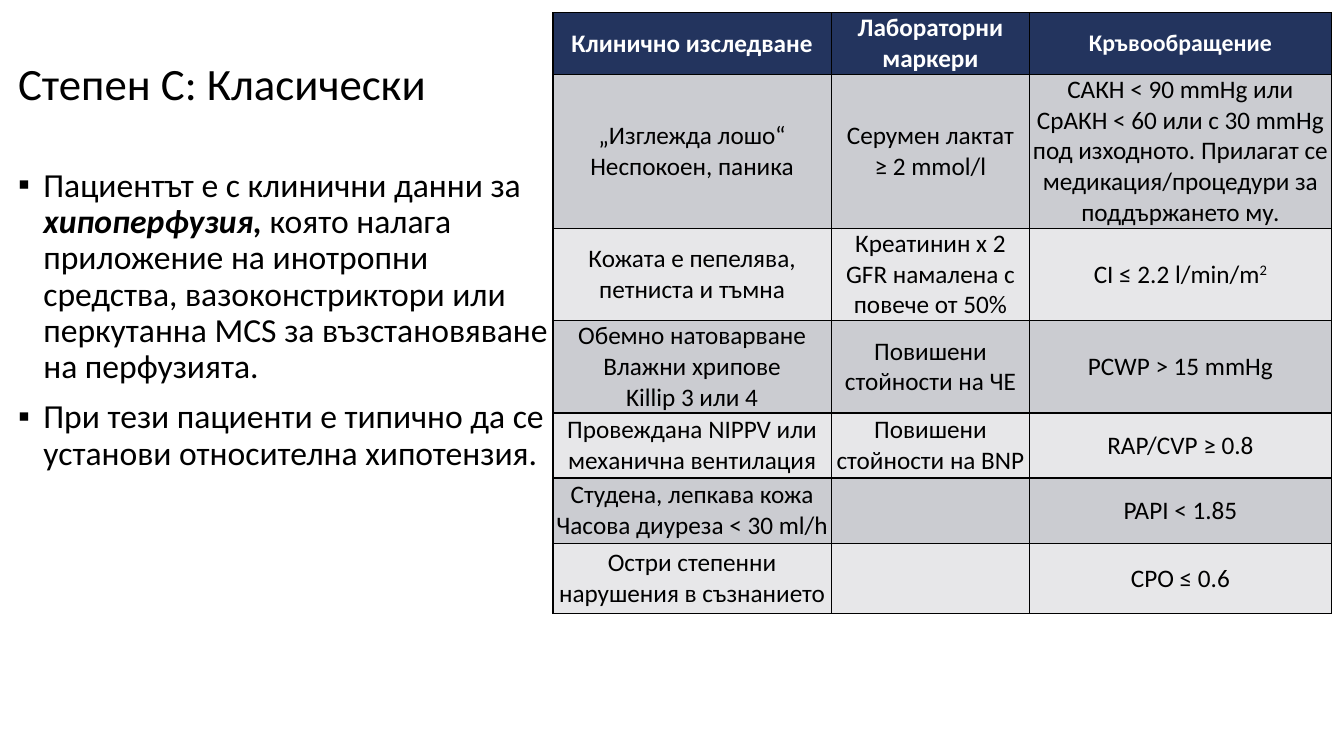
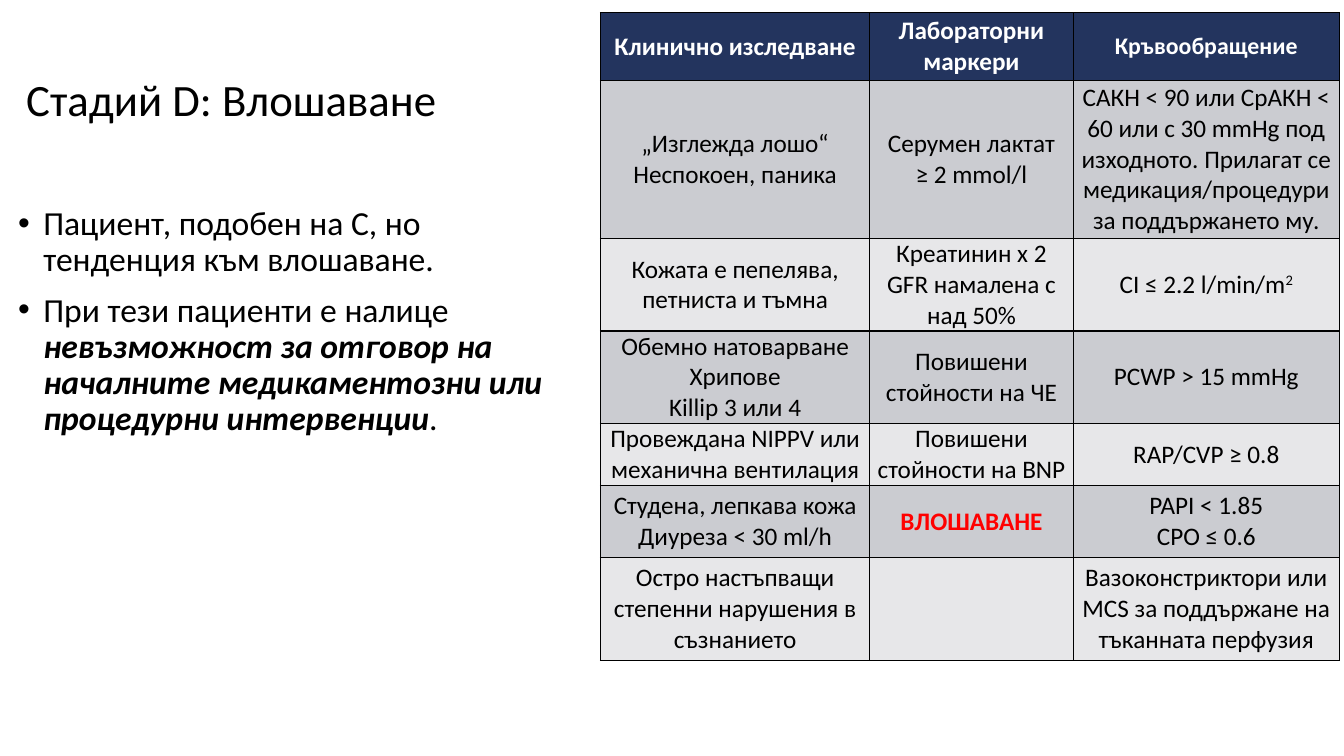
"""Build two slides on the clinical stages of shock, each with a criteria table."""
from dataclasses import dataclass

from lxml.etree import SubElement
from pptx import Presentation
from pptx.dml.color import RGBColor
from pptx.enum.text import MSO_ANCHOR as Anchor, PP_ALIGN as Align
from pptx.oxml.ns import qn
from pptx.slide import Slide
from pptx.table import _Cell as TableCell
from pptx.text.text import Font, TextFrame
from pptx.util import Pt

FONT = "Calibri"
BLACK, WHITE, RED = "000000", "FFFFFF", "FF0000"
NAVY, GREY, PALE = "23345E", "CBCCD1", "E7E7E9"
TITLE_SIZE, BODY_SIZE, CELL_SIZE = 32, 24, 18
BODY_INDENT = 18
INSET = 3.6
TABLE_TOP = 9
BORDERS = ("a:lnL", "a:lnR", "a:lnT", "a:lnB")


@dataclass(frozen=True)
class Box:
    left: float
    top: float
    width: float
    height: float


@dataclass(frozen=True)
class Point:
    lead: str
    stress: str = ""
    rest: str = ""


@dataclass(frozen=True)
class Entry:
    text: str = ""
    raised: str = ""
    size: float = CELL_SIZE
    color: str = BLACK
    bold: bool = False


@dataclass(frozen=True)
class Stage:
    title: str
    title_box: Box
    bullet: str
    points: tuple[Point, ...]
    points_box: Box
    table_left: float
    columns: tuple[float, ...]
    heights: tuple[float, ...]
    rows: tuple[tuple[Entry, ...], ...]


def heading(text: str, size: float = CELL_SIZE) -> Entry:
    return Entry(text, size=size, color=WHITE, bold=True)


HEADINGS = (
    heading("Клинично изследване"),
    heading("Лабораторни маркери"),
    heading("Кръвообращение", 17),
)
LOOKS_ILL = Entry("„Изглежда лошо“\nНеспокоен, паника")
LACTATE = Entry("Серумен лактат\n≥ 2 mmol/l")
SKIN = Entry("Кожата е пепелява, петниста и тъмна")
CARDIAC_INDEX = Entry("CI ≤ 2.2 l/min/m", raised="2")
LIVER = Entry("Повишени стойности на ЧЕ")
WEDGE = Entry("PCWP > 15 mmHg")
VENTILATION = (
    Entry("Провеждана NIPPV или\nмеханична вентилация"),
    Entry("Повишени стойности на BNP"),
    Entry("RAP/CVP ≥ 0.8"),
)

STAGES = (
    Stage(
        title="Степен C: Класически",
        title_box=Box(9.36, 9.36, 828, 104.4),
        bullet="▪",
        points=(
            Point(
                "Пациентът е с клинични данни за ",
                "хипоперфузия,",
                " която налага приложение на инотропни средства, вазоконстриктори "
                "или перкутанна MCS за възстановяване на перфузията.",
            ),
            Point("При тези пациенти е типично да се установи относителна хипотензия."),
        ),
        points_box=Box(9.36, 116.64, 396.72, 245.52),
        table_left=395,
        columns=(198.72, 141.84, 215.28),
        heights=(44, 110, 66, 66, 46.5, 46.5, 50.5),
        rows=(
            HEADINGS,
            (
                LOOKS_ILL,
                LACTATE,
                Entry(
                    "САКН < 90 mmHg или\nСрАКН < 60 или с 30 mmHg под изходното. "
                    "Прилагат се медикация/процедури за поддържането му."
                ),
            ),
            (SKIN, Entry("Креатинин х 2\nGFR намалена с повече от 50%"), CARDIAC_INDEX),
            (Entry("Обемно натоварване\nВлажни хрипове\nKillip 3 или 4"), LIVER, WEDGE),
            VENTILATION,
            (
                Entry("Студена, лепкава кожа\nЧасова диуреза < 30 ml/h"),
                Entry(),
                Entry("PAPI < 1.85"),
            ),
            (
                Entry("Остри степенни нарушения в съзнанието"),
                Entry(),
                Entry("CPO ≤ 0.6"),
            ),
        ),
    ),
    Stage(
        title="Стадий D: Влошаване",
        title_box=Box(15.12, 20.88, 831.6, 104.4),
        bullet="•",
        points=(
            Point("Пациент, подобен на С, но тенденция към влошаване."),
            Point(
                "При тези пациенти е налице ",
                "невъзможност за отговор на началните медикаментозни "
                "или процедурни интервенции",
                ".",
            ),
        ),
        points_box=Box(9.36, 144, 408.24, 245.52),
        table_left=429,
        columns=(192.24, 145.44, 190.08),
        heights=(48.5, 113, 66, 66, 44.5, 51, 74),
        rows=(
            HEADINGS,
            (
                LOOKS_ILL,
                LACTATE,
                Entry(
                    "САКН < 90 или СрАКН < 60 или с 30 mmHg под изходното. "
                    "Прилагат се медикация/процедури за поддържането му."
                ),
            ),
            (SKIN, Entry("Креатинин х 2\nGFR намалена с над 50%"), CARDIAC_INDEX),
            (Entry("Обемно натоварване\nХрипове\nKillip 3 или 4"), LIVER, WEDGE),
            VENTILATION,
            (
                Entry("Студена, лепкава кожа\nДиуреза < 30 ml/h"),
                Entry("ВЛОШАВАНЕ", color=RED, bold=True),
                Entry("PAPI < 1.85\nCPO ≤ 0.6"),
            ),
            (
                Entry("Остро настъпващи степенни нарушения в съзнанието"),
                Entry(),
                Entry("Вазоконстриктори или MCS за поддържане на тъканната перфузия"),
            ),
        ),
    ),
)


def rgb(value: str) -> RGBColor:
    return RGBColor.from_string(value)


def style(font: Font, size: float, color: str = BLACK, bold: bool = False) -> None:
    font.name, font.size, font.bold = FONT, Pt(size), bold
    font.color.rgb = rgb(color)


def add_frame(slide: Slide, box: Box, anchor: Anchor) -> TextFrame:
    lengths = (Pt(length) for length in (box.left, box.top, box.width, box.height))
    frame = slide.shapes.add_textbox(*lengths).text_frame
    frame.word_wrap, frame.vertical_anchor = True, anchor
    frame.margin_left = frame.margin_right = Pt(INSET)
    frame.margin_top = frame.margin_bottom = Pt(INSET)
    return frame


def add_title(slide: Slide, stage: Stage) -> None:
    title = add_frame(slide, stage.title_box, Anchor.MIDDLE).paragraphs[0]
    title.text, title.line_spacing = stage.title, 0.9
    style(title.font, TITLE_SIZE)


def add_points(slide: Slide, stage: Stage) -> None:
    frame = add_frame(slide, stage.points_box, Anchor.TOP)
    for index, point in enumerate(stage.points):
        paragraph = frame.add_paragraph() if index else frame.paragraphs[0]
        properties = paragraph._p.get_or_add_pPr()
        properties.set("marL", str(Pt(BODY_INDENT)))
        properties.set("indent", str(-Pt(BODY_INDENT)))
        SubElement(properties, qn("a:buFont"), typeface="Arial")
        SubElement(properties, qn("a:buChar"), char=stage.bullet)
        paragraph.line_spacing = 0.9
        if index:
            paragraph.space_before = Pt(10)
        style(paragraph.font, BODY_SIZE)
        for text in filter(None, (point.lead, point.stress, point.rest)):
            run = paragraph.add_run()
            run.text = text
            if text == point.stress:
                run.font.bold = run.font.italic = True


def add_borders(cell: TableCell) -> None:
    properties = cell._tc.get_or_add_tcPr()
    for side in BORDERS:
        line = SubElement(properties, qn(side), w=str(Pt(1)))
        SubElement(SubElement(line, qn("a:solidFill")), qn("a:srgbClr"), val=BLACK)


def fill_cell(cell: TableCell, entry: Entry, shade: str) -> None:
    add_borders(cell)
    cell.fill.solid()
    cell.fill.fore_color.rgb = rgb(shade)
    cell.vertical_anchor = Anchor.MIDDLE
    cell.margin_left = cell.margin_right = cell.margin_top = cell.margin_bottom = 0
    cell.text_frame.text = entry.text
    for paragraph in cell.text_frame.paragraphs:
        paragraph.alignment = Align.CENTER
        style(paragraph.font, entry.size, entry.color, entry.bold)
    if entry.raised:
        exponent = cell.text_frame.paragraphs[-1].add_run()
        exponent.text = entry.raised
        exponent.font._element.set("baseline", "30000")


def add_criteria(slide: Slide, stage: Stage) -> None:
    criteria = slide.shapes.add_table(
        len(stage.rows), len(stage.columns), Pt(stage.table_left), Pt(TABLE_TOP),
        Pt(sum(stage.columns)), Pt(sum(stage.heights)),
    ).table
    for column, width in zip(criteria.columns, stage.columns):
        column.width = Pt(width)
    for index, (entries, height) in enumerate(zip(stage.rows, stage.heights)):
        criteria.rows[index].height = Pt(height)
        shade = NAVY if index == 0 else GREY if index % 2 else PALE
        for position, entry in enumerate(entries):
            fill_cell(criteria.cell(index, position), entry, shade)


def main() -> None:
    deck = Presentation()
    deck.slide_width, deck.slide_height = Pt(960), Pt(540)
    for stage in STAGES:
        slide = deck.slides.add_slide(deck.slide_layouts[6])
        add_title(slide, stage)
        add_points(slide, stage)
        add_criteria(slide, stage)
    deck.save("out.pptx")


if __name__ == "__main__":
    main()
